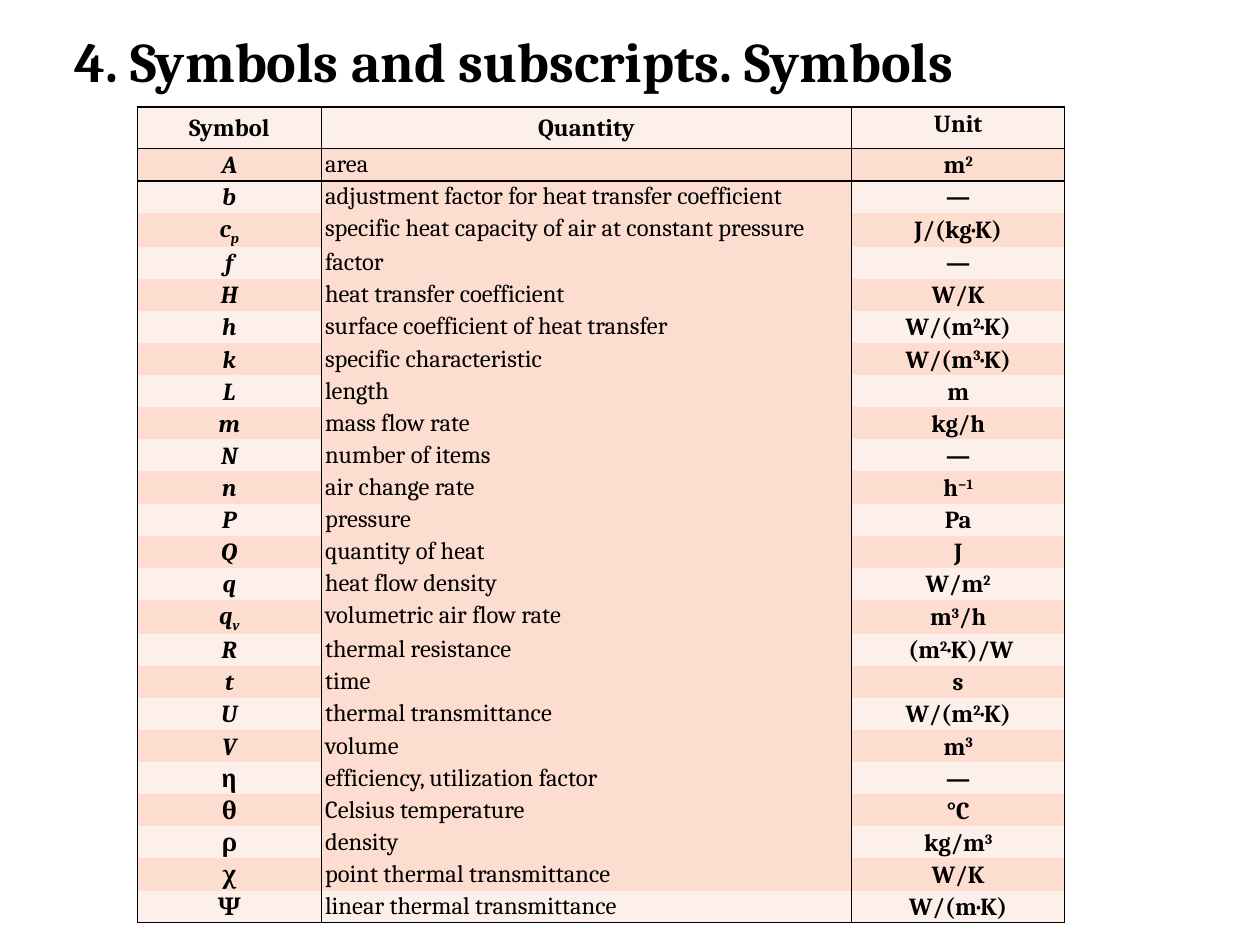
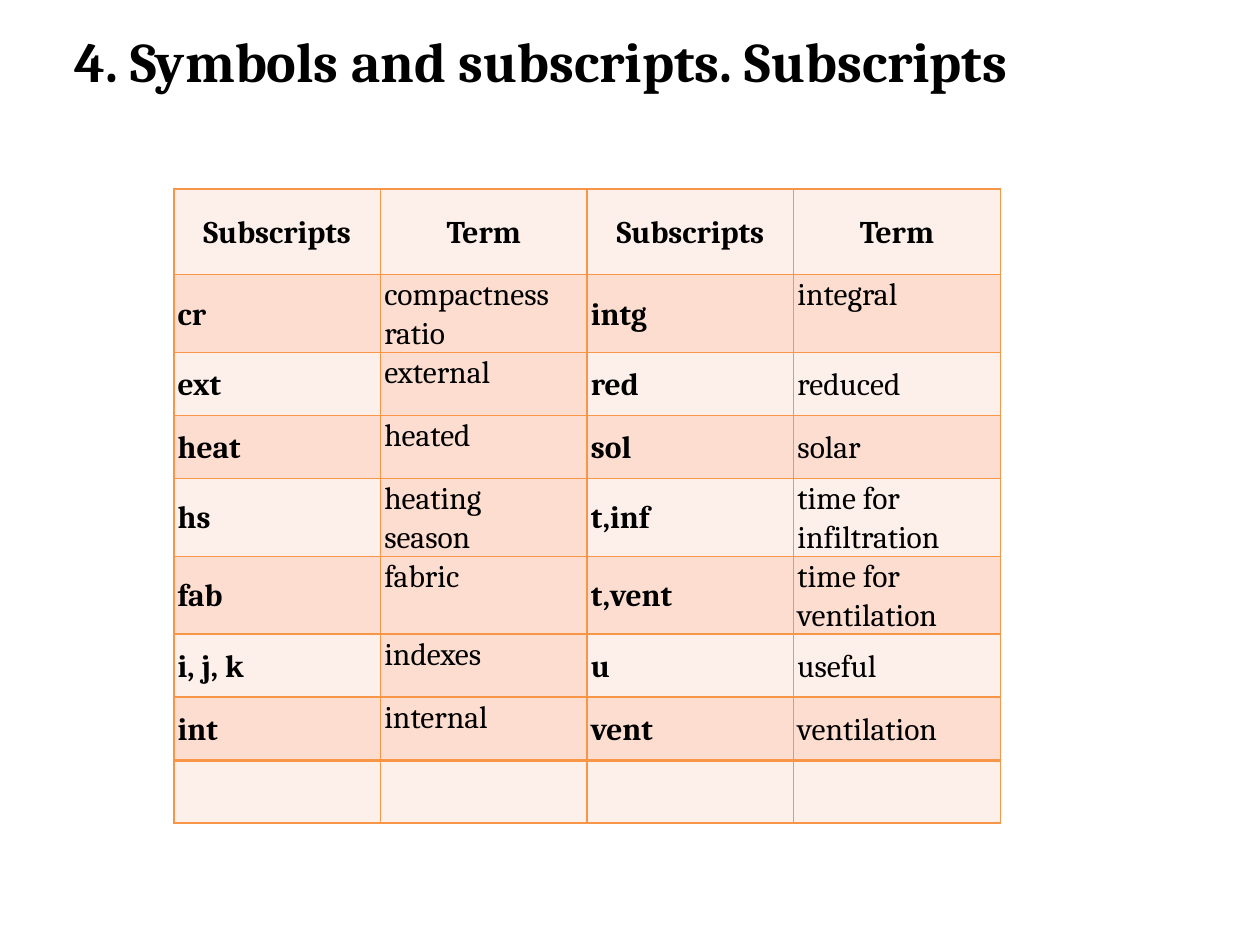
import pptx
import pptx.dml.color
import pptx.enum.text
import pptx.util
from lxml import etree
from pptx.oxml.ns import qn

Inches = pptx.util.Inches
Pt = pptx.util.Pt
CENTER = pptx.enum.text.PP_ALIGN.CENTER
LEFT = pptx.enum.text.PP_ALIGN.LEFT
MIDDLE = pptx.enum.text.MSO_ANCHOR.MIDDLE
TOP = pptx.enum.text.MSO_ANCHOR.TOP

FONT = "Cambria"
BLACK, ORANGE = "000000", "F79646"
LIGHT, DARK = "FDEFE9", "FCDDCF"
NO_STYLE = "{2D5ABB26-0587-4C30-8999-92F81FD0307C}"
BASELINES = {"^": "30000", "_": "-25000"}

# In cell text "|" separates runs; a run led by ^ is raised, one led by _ is lowered.
SYMBOLS = [
    ("Symbol", "Quantity", "Unit"),
    ("A", "area", "m|^2"),
    ("b", "adjustment factor for heat transfer coefficient", "—"),
    ("c|_p", "specific heat capacity of air at constant pressure", "J/(kg·K)"),
    ("f", "factor", "—"),
    ("H", "heat transfer coefficient", "W/K"),
    ("h", "surface coefficient of heat transfer", "W/(m|^2|·K)"),
    ("k", "specific characteristic", "W/(m|^3|·K)"),
    ("L", "length", "m"),
    ("m", "mass flow rate", "kg/h"),
    ("N", "number of items", "—"),
    ("n", "air change rate", "h|^−1"),
    ("P", "pressure", "Pa"),
    ("Q", "quantity of heat", "J"),
    ("q", "heat flow density", "W/m|^2"),
    ("q|_v", "volumetric air flow rate", "m|^3|/h"),
    ("R", "thermal resistance", " (m|^2|·K)/W"),
    ("t", "time", "s"),
    ("U", "thermal transmittance", "W/(m|^2|·K)"),
    ("V", "volume", "m|^3"),
    ("η", "efficiency, utilization factor", "—"),
    ("θ", "Celsius temperature", "°C"),
    ("ρ", "density", "kg/m|^3"),
    ("χ", "point thermal transmittance", "W/K"),
    ("Ψ", "linear thermal transmittance", "W/(m·K)"),
]

SUBSCRIPTS = [
    ("Subscripts", "Term", "Subscripts", "Term"),
    ("cr", "compactness ratio", "intg", "integral"),
    ("ext", "external", "red", "reduced"),
    ("heat", "heated", "sol", "solar"),
    ("hs", "heating |\n|season", "t,inf", "time for infiltration"),
    ("fab", "fabric", "t,vent", "time for ventilation"),
    ("i, j, k", "indexes", "u", "useful"),
    ("int", "internal", "vent", "ventilation"),
    ("", "", "", ""),
]


def rgb(value):
    return pptx.dml.color.RGBColor.from_string(value)


def style_font(font, size, bold=False, italic=False):
    font.name = FONT
    font.size = Pt(size)
    font.bold = bold
    font.italic = italic
    font.color.rgb = rgb(BLACK)


def add_titled_slide(prs, title):
    slide = prs.slides.add_slide(prs.slide_layouts[5])
    sp = slide.shapes.title
    sp.left, sp.top = Inches(0.49), Inches(0)
    sp.width, sp.height = Inches(8.77), Inches(1.02)
    tf = sp.text_frame
    tf.text = title
    tf.vertical_anchor = MIDDLE
    p = tf.paragraphs[0]
    p.alignment = LEFT
    p.line_spacing = 0.9
    style_font(p.font, 32, bold=True)
    return slide


def add_table(slide, left, top, widths, heights):
    frame = slide.shapes.add_table(
        len(heights), len(widths), Inches(left), Inches(top),
        Inches(sum(widths)), Inches(sum(heights)))
    table = frame.table
    frame._element.find(".//" + qn("a:tableStyleId")).text = NO_STYLE
    for column, width in zip(table.columns, widths):
        column.width = Inches(width)
    for row, height in zip(table.rows, heights):
        row.height = Inches(height)
    return table


def format_cell(cell, fill, line_color, line_widths, anchor):
    """Set borders (side letter to points), then the fill, which must follow them in XML."""
    tcPr = cell._tc.get_or_add_tcPr()
    for side in "LRTB":
        if side in line_widths:
            ln = etree.SubElement(tcPr, qn("a:ln" + side), w=str(Pt(line_widths[side])))
            solid = etree.SubElement(ln, qn("a:solidFill"))
            etree.SubElement(solid, qn("a:srgbClr"), val=line_color)
    cell.fill.solid()
    cell.fill.fore_color.rgb = rgb(fill)
    cell.margin_left = cell.margin_right = Inches(0.03)
    cell.margin_top = cell.margin_bottom = 0
    cell.vertical_anchor = anchor


def write_cell(cell, text, size, align, bold, italic=False, header=False):
    p = cell.text_frame.paragraphs[0]
    p.alignment = align
    p.line_spacing = 1.07
    if header:
        p.space_before = p.space_after = Pt(3)
    style_font(p.font, size, bold, italic)
    for part in filter(None, text.split("|")):
        if part == "\n":
            p.add_line_break()
            continue
        r = p.add_run()
        r.text = part.lstrip("^_")
        if part[0] in BASELINES:
            r._r.get_or_add_rPr().set("baseline", BASELINES[part[0]])
    return p


def band(row):
    return DARK if row % 2 else LIGHT


def fill_symbols(table):
    last = len(SYMBOLS) - 1
    for i, texts in enumerate(SYMBOLS):
        lines = {"L": 1, "R": 1}
        if i <= 1:
            lines["T"] = 1
        if i in (0, last):
            lines["B"] = 1
        for j, text in enumerate(texts):
            cell = table.cell(i, j)
            header = i == 0
            quantity = j == 1 and not header
            fill = DARK if quantity and i < last else band(i)
            format_cell(cell, fill, BLACK, lines, TOP if quantity else MIDDLE)
            p = write_cell(cell, text, 14, LEFT if quantity else CENTER,
                           bold=not quantity, header=header,
                           italic=j == 0 and not header and text.isascii())
            if text == "Unit":
                p.line_spacing = Pt(12)


def fill_subscripts(table):
    last = len(SUBSCRIPTS) - 1
    for i, texts in enumerate(SUBSCRIPTS):
        lines = dict.fromkeys("LRTB", 1)
        if i == last:
            lines["T"] = 2
        elif i == last - 1:
            lines["B"] = 2
        for j, text in enumerate(texts):
            cell = table.cell(i, j)
            header = i == 0
            first_terms = j == 1 and 0 < i < last
            top = first_terms or text == "integral"
            format_cell(cell, DARK if first_terms else band(i), ORANGE, lines,
                        TOP if top else MIDDLE)
            write_cell(cell, text, 18, CENTER if header else LEFT,
                       bold=header or j % 2 == 0, header=header)


def main():
    prs = pptx.Presentation()
    prs.slide_width, prs.slide_height = Inches(10), Inches(7.5)

    slide = add_titled_slide(prs, "4. Symbols and subscripts. Symbols")
    heights = [0.33] + [0.255] * (len(SYMBOLS) - 1)
    fill_symbols(add_table(slide, 1.09, 0.85, [1.46, 4.21, 1.69], heights))

    slide = add_titled_slide(prs, "4. Symbols and subscripts. Subscripts")
    heights = [0.68] + [0.5] * (len(SUBSCRIPTS) - 1)
    fill_subscripts(add_table(slide, 1.38, 1.5, [1.64] * 4, heights))

    prs.save("out.pptx")


if __name__ == "__main__":
    main()
